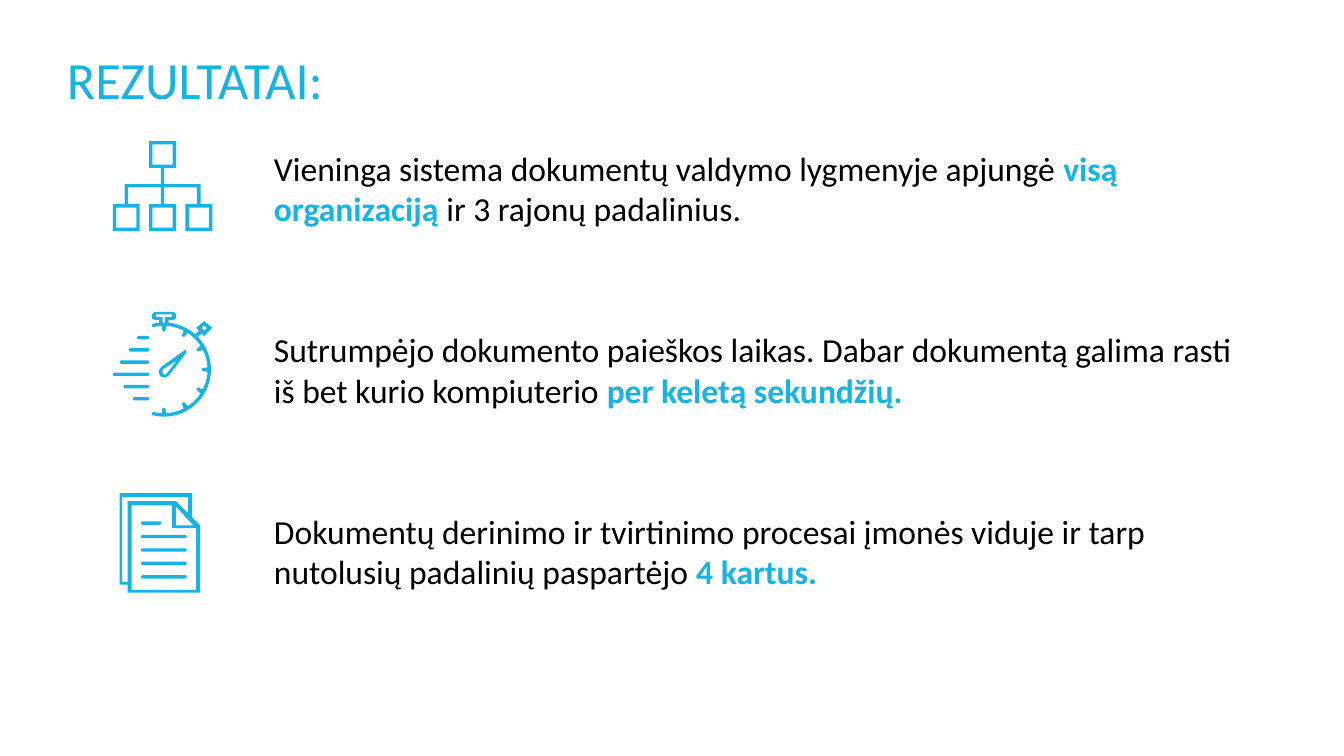
from dataclasses import dataclass
from math import cos, radians, sin

from pptx import Presentation
from pptx import util as u
from pptx.dml import color
from pptx.enum import shapes, text


@dataclass
class Theme:
    font: str = "Calibri"
    blue: color.RGBColor = color.RGBColor(0x17, 0xB3, 0xE2)
    black: color.RGBColor = color.RGBColor(0, 0, 0)
    head: u.Pt = u.Pt(28)
    body: u.Pt = u.Pt(18)
    gap: u.Pt = u.Pt(54)


theme = Theme()
deck = Presentation()
deck.slide_width = u.Inches(10)
deck.slide_height = u.Inches(5.625)
slide = deck.slides.add_slide(deck.slide_layouts[6])
cell = deck.slide_width / 1000
stroke = 2.5


def square(left, top, right, bottom):
    return [(left, top), (right, top), (right, bottom), (left, bottom)]


def trace(group, loops):
    scaled = [[(x * cell, y * cell) for x, y in loop] for loop in loops]
    pen = group.shapes.build_freeform(*scaled[0][0], scale=1.0)
    for loop in scaled:
        pen.move_to(*loop[0])
        pen.add_line_segments(loop[1:], close=True)
    pen.convert_to_shape()


title = [[("REZULTATAI:", True)]]
points = [
    [("Vieninga sistema dokumentų valdymo lygmenyje apjungė ", False),
     ("visą organizaciją ", True), ("ir 3 rajonų padalinius.", False)],
    [("Sutrumpėjo dokumento paieškos laikas. Dabar dokumentą galima rasti "
      "iš bet kurio kompiuterio ", False), ("per keletą sekundžių.", True)],
    [("Dokumentų derinimo ir tvirtinimo procesai įmonės viduje ir tarp "
      "nutolusių padalinių paspartėjo ", False), ("4 kartus.", True)],
]
blocks = [
    (title, (40, 23, 921, 71), theme.head, text.MSO_ANCHOR.MIDDLE),
    (points, (194, 105, 737, 297), theme.body, text.MSO_ANCHOR.TOP),
]
for paras, area, size, anchor in blocks:
    frame = slide.shapes.add_textbox(*[round(n * cell) for n in area]).text_frame
    frame.word_wrap = True
    frame.vertical_anchor = anchor
    for row, parts in enumerate(paras):
        para = frame.add_paragraph() if row else frame.paragraphs[0]
        if row:
            para.space_before = theme.gap
        for words, accent in parts:
            run = para.add_run()
            run.text = words
            run.font.name, run.font.size = theme.font, size
            run.font.bold = accent and paras is points
            run.font.color.rgb = theme.blue if accent else theme.black

chart, watch, pages = [slide.shapes.add_group_shape() for _ in range(3)]

side, pitch, mid = 20, 27, 111
upper, lower = 105, 152
axis, beam = mid + side / 2, 137
half = stroke / 2
right = [(axis + half, upper + side), (axis + half, beam),
         (axis + pitch + half, beam), (axis + pitch + half, lower),
         (axis + pitch - half, lower), (axis + pitch - half, beam + stroke),
         (axis + half, beam + stroke), (axis + half, lower)]
left = [(2 * axis - x, y) for x, y in reversed(right)]
tree = [right + left]
nodes = [(mid, upper)] + [(mid + n * pitch, lower) for n in (-1, 0, 1)]
for x, y in nodes:
    for inset in (0, stroke):
        tree.append(square(x + inset, y + inset, x + side - inset, y + side - inset))
trace(chart, tree)

hub_x, hub_y = 122, 275
outer, inner, tick = 35, 32.5, 28.5
start, end, every = -15, 195, 30
rim = [(outer, n) for n in range(start, end + 1)]
for angle in range(end, start - 1, -1):
    near = min(angle % every, -angle % every) <= 2 and -2 <= angle <= 182
    rim.append((tick if near else inner, angle))
dial = [(hub_x + r * sin(radians(n)), hub_y - r * cos(radians(n))) for r, n in rim]

crown = [(3.5, 240), (3.5, 238), (7, 238), (9, 237), (9, 234), (7, 232)]
slot = [(1, 240), (1, 236), (6, 236), (6, 234)]
cap = [[(hub_x + x, y) for x, y in edge]
       + [(hub_x - x, y) for x, y in reversed(edge)] for edge in (crown, slot)]
button = [(152, 239), (158, 244), (152, 250), (150, 248), (147, 251), (145, 249),
          (148, 246), (146, 244)]
eye = [(152, 242), (154, 244), (152, 246), (150, 244)]
hand = [(123, 281), (126, 279), (139, 262), (138, 260), (137, 261), (120, 273),
        (118, 276), (119, 280)]
core = [(121, 277), (121, 275), (132, 268), (124, 278), (123, 279), (121, 278)]
trace(watch, [dial, *cap, button, eye])
trace(watch, [hand, core])

sheets = [(143, 385), (143, 367), (89, 367), (89, 435), (95, 435), (95, 441),
          (149, 441), (149, 391)]
fold = [(131, 377), (144, 391), (131, 391)]
back = [(91, 433), (91, 370), (140, 370), (140, 382), (131, 373), (95, 373), (95, 433)]
front = [(98, 439), (98, 376), (128, 376), (128, 393), (146, 393), (146, 439)]
trace(pages, [sheets, fold, back, front])

speed = [(start, 111) for start in (102, 96, 89, 84, 92, 99)]
lines = [(105, stop) for stop in (120, 139, 139, 139, 139)]
for group, spans, top, step in [(watch, speed, 250, 9.1), (pages, lines, 388, 10)]:
    for row, (start, stop) in enumerate(spans):
        area = (start, top + row * step, stop - start, stroke)
        bar = group.shapes.add_shape(shapes.MSO_SHAPE.ROUNDED_RECTANGLE,
                                     *[round(n * cell) for n in area])
        bar.adjustments[0] = 0.5

for group in (chart, watch, pages):
    for part in group.shapes:
        part.shadow.inherit = False
        part.fill.solid()
        part.fill.fore_color.rgb = theme.blue
        part.line.fill.background()

deck.save("out.pptx")
